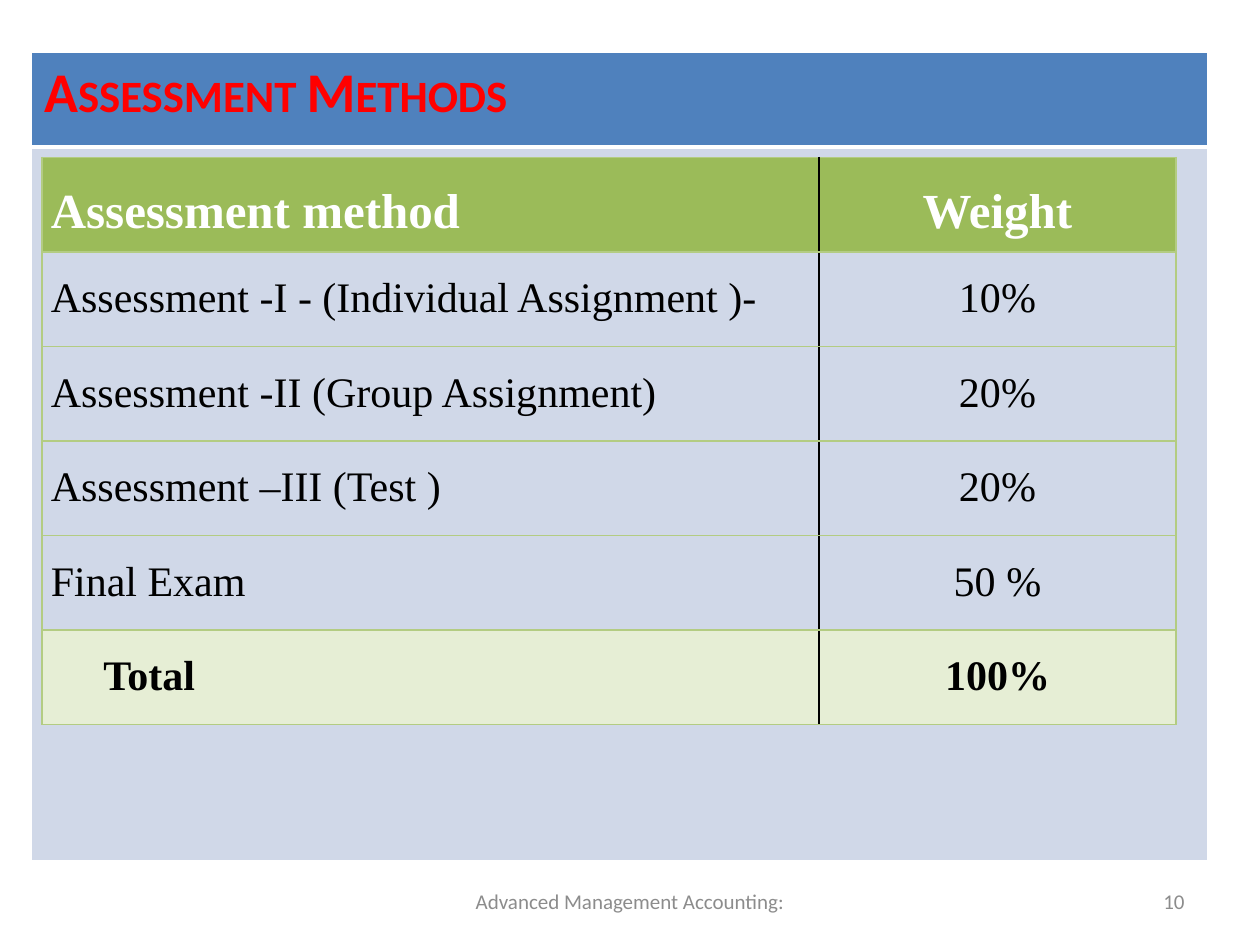
from dataclasses import dataclass
from typing import Optional

from lxml import etree
from pptx import Presentation
from pptx.dml.color import RGBColor
from pptx.enum.text import MSO_ANCHOR, PP_ALIGN
from pptx.oxml.ns import qn
from pptx.util import Inches, Pt

LEFT, CENTER, RIGHT = PP_ALIGN.LEFT, PP_ALIGN.CENTER, PP_ALIGN.RIGHT
JUSTIFY = PP_ALIGN.JUSTIFY
MIDDLE = MSO_ANCHOR.MIDDLE

WHITE = RGBColor(0xFF, 0xFF, 0xFF)
BLACK = RGBColor(0x00, 0x00, 0x00)
RED = RGBColor(0xFF, 0x00, 0x00)
GREY = RGBColor(0x8C, 0x8C, 0x8C)
BLUE = RGBColor(0x4F, 0x81, 0xBD)
PALE_BLUE = RGBColor(0xD0, 0xD8, 0xE8)
GREEN = RGBColor(0x9B, 0xBB, 0x59)
PALE_GREEN = RGBColor(0xE6, 0xEE, 0xD5)
EDGE_GREEN = RGBColor(0xB3, 0xCC, 0x82)

SANS, SERIF = "Calibri", "Times New Roman"
TOTAL_INDENT = Pt(30)


@dataclass(frozen=True)
class TextStyle:
    font: str
    size: int
    color: RGBColor
    bold: bool = False


@dataclass(frozen=True)
class WeightRow:
    method: str
    weight: str
    style: TextStyle
    fill: Optional[RGBColor] = None
    indent: int = 0


@dataclass(frozen=True)
class FooterItem:
    text: str
    left: int
    width: int
    align: PP_ALIGN


HEADING = TextStyle(SANS, 32, RED, True)
FOOTER = TextStyle(SANS, 12, GREY)
HEADER = TextStyle(SERIF, 28, WHITE, True)
BODY = TextStyle(SERIF, 24, BLACK)
TOTAL = TextStyle(SERIF, 24, BLACK, True)

WEIGHT_ROWS = [
    WeightRow("Assessment method", "Weight", HEADER, GREEN),
    WeightRow("Assessment -I - (Individual Assignment )-", "10%", BODY),
    WeightRow("Assessment -II (Group Assignment)", "20%", BODY),
    WeightRow("Assessment –III (Test )", "20%", BODY),
    WeightRow("Final Exam", "50 %", BODY),
    WeightRow("Total", "100%", TOTAL, PALE_GREEN, TOTAL_INDENT),
]
FOOTER_ITEMS = [
    FooterItem("Advanced Management Accounting:", 41, 38, CENTER),
    FooterItem("10", 86, 28, RIGHT),
]


def grid(units: float) -> int:
    """Length of grid units, twelve to the inch."""
    return Inches(units / 12)


def write(frame, text: str, style: TextStyle, align: PP_ALIGN):
    frame.text = text
    paragraph = frame.paragraphs[0]
    paragraph.alignment = align
    font = paragraph.runs[0].font
    font.name, font.size, font.bold = style.font, Pt(style.size), style.bold
    font.color.rgb = style.color
    return paragraph


def add_plain_table(slide, left: int, top: int, columns: list, rows: list):
    table = slide.shapes.add_table(
        len(rows), len(columns), grid(left), grid(top),
        grid(sum(columns)), grid(sum(rows))).table
    table.first_row = table.horz_banding = False
    for column, width in zip(table.columns, columns):
        column.width = grid(width)
    for row, height in zip(table.rows, rows):
        row.height = grid(height)
    return table


def dress_cell(cell, fill: Optional[RGBColor], **edges: tuple) -> None:
    """Set borders, given as L, R, T, B = (colour, points), then the fill."""
    properties = cell._tc.get_or_add_tcPr()
    for side, (color, points) in edges.items():
        line = etree.SubElement(properties, qn(f"a:ln{side}"), w=str(Pt(points)))
        solid = etree.SubElement(line, qn("a:solidFill"))
        etree.SubElement(solid, qn("a:srgbClr"), val=str(color))
    if fill is None:
        cell.fill.background()
    else:
        cell.fill.solid()
        cell.fill.fore_color.rgb = fill


def add_panel(slide) -> None:
    panel = add_plain_table(slide, 3, 5, [112], [9, 68])
    title_cell, body_cell = panel.cell(0, 0), panel.cell(1, 0)
    thin, thick = (WHITE, 1), (WHITE, 3)
    dress_cell(title_cell, BLUE, L=thin, R=thin, T=thin, B=thick)
    dress_cell(body_cell, PALE_BLUE, L=thin, R=thin, T=thick, B=thin)
    title = write(title_cell.text_frame, "Assessment Methods", HEADING, LEFT)
    title.runs[0].font._element.set("cap", "small")


def add_weights(slide) -> None:
    weights = add_plain_table(slide, 4, 15, [74, 34], [9] * len(WEIGHT_ROWS))
    edge, divider = (EDGE_GREEN, 1), (BLACK, 1)
    for index, row in enumerate(WEIGHT_ROWS):
        method, weight = weights.cell(index, 0), weights.cell(index, 1)
        dress_cell(method, row.fill, L=edge, R=divider, T=edge, B=edge)
        dress_cell(weight, row.fill, L=divider, R=edge, T=edge, B=edge)
        for cell, text, align in ((method, row.method, JUSTIFY),
                                  (weight, row.weight, CENTER)):
            cell.margin_left = cell.margin_right = Inches(0.07)
            cell.margin_top = cell.margin_bottom = 0
            paragraph = write(cell.text_frame, text, row.style, align)
            paragraph.line_spacing = 1.5
            if row.indent and cell is method:
                paragraph._p.get_or_add_pPr().set("marL", str(row.indent))


def add_footer(slide, item: FooterItem) -> None:
    box = slide.shapes.add_textbox(
        grid(item.left), Inches(6.95), grid(item.width), Inches(0.4))
    box.text_frame.word_wrap = True
    box.text_frame.vertical_anchor = MIDDLE
    write(box.text_frame, item.text, FOOTER, item.align)


def main() -> None:
    deck = Presentation()
    deck.slide_width, deck.slide_height = Inches(10), Inches(7.5)
    slide = deck.slides.add_slide(deck.slide_layouts[6])

    # Footer and slide number
    for item in FOOTER_ITEMS:
        add_footer(slide, item)

    # Title panel, then the weights on top of it
    add_panel(slide)
    add_weights(slide)

    deck.save("out.pptx")


if __name__ == "__main__":
    main()
